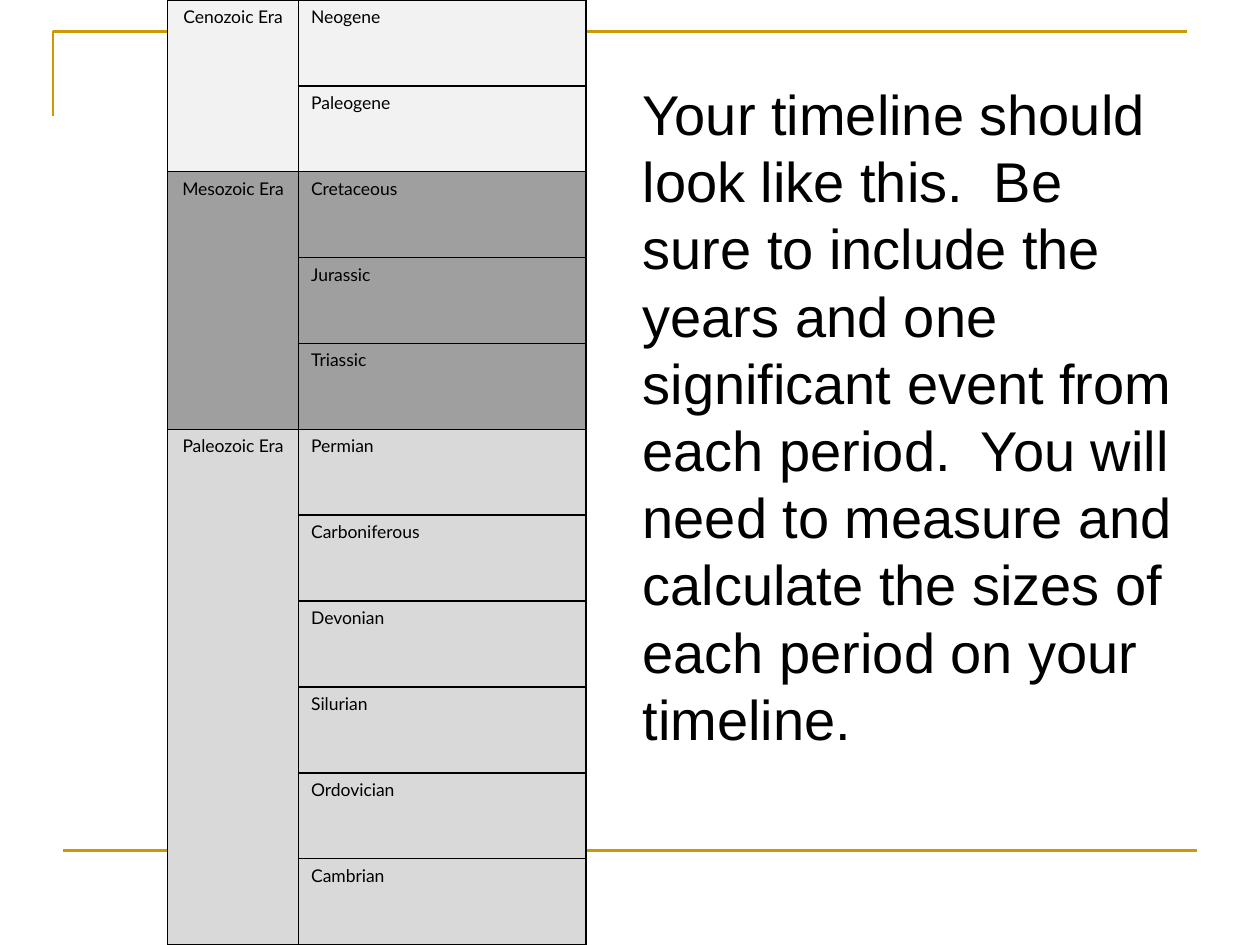
from lxml import etree
from pptx import Presentation
from pptx import util as u
from pptx.dml.color import RGBColor
from pptx.enum import shapes, text
from pptx.oxml import ns

GOLD = RGBColor(0xCC, 0x99, 0x00)
BLACK = RGBColor(0, 0, 0)
CENOZOIC = RGBColor(0xF2, 0xF2, 0xF2)
MESOZOIC = RGBColor(0x9F, 0x9F, 0x9F)
PALEOZOIC = RGBColor(0xD9, 0xD9, 0xD9)

ERAS = [
    ("Cenozoic Era", CENOZOIC, ["Neogene", "Paleogene"]),
    ("Mesozoic Era", MESOZOIC, ["Cretaceous", "Jurassic", "Triassic"]),
    ("Paleozoic Era", PALEOZOIC,
     ["Permian", "Carboniferous", "Devonian", "Silurian", "Ordovician", "Cambrian"]),
]
INSTRUCTIONS = (
    "Your timeline should look like this.  Be sure to include the years and one "
    "significant event from each period.  You will need to measure and calculate "
    "the sizes of each period on your timeline."
)


class TimelinePage:
    title_font = "Arial"
    table_font = "Lato"
    rule_width = u.Pt(1.5)
    border_width = u.Pt(1)

    def __init__(self, deck):
        self.page = deck.slides.add_slide(deck.slide_layouts[5])

    def add_span(self, para, words, font, size):
        span = para.add_run()
        span.text = words
        span.font.name = font
        span.font.size = u.Pt(size)
        span.font.color.rgb = BLACK

    def title(self, words, left, top, width, height):
        box = self.page.shapes.title
        box.left, box.top = u.Inches(left), u.Inches(top)
        box.width, box.height = u.Inches(width), u.Inches(height)
        frame = box.text_frame
        frame.word_wrap = True
        frame.auto_size = text.MSO_AUTO_SIZE.NONE
        frame.vertical_anchor = text.MSO_ANCHOR.TOP
        para = frame.paragraphs[0]
        para.alignment = text.PP_ALIGN.LEFT
        para.line_spacing = u.Pt(38.4)
        self.add_span(para, words, self.title_font, 32)

    def corner(self, points):
        start, *rest = [(u.Inches(x), u.Inches(y)) for x, y in points]
        builder = self.page.shapes.build_freeform(*start)
        builder.add_line_segments(rest, close=False)
        outline = builder.convert_to_shape()
        outline.shadow.inherit = False
        outline.fill.background()
        self.rule_style(outline)

    def rule(self, x1, y1, x2, y2):
        line = self.page.shapes.add_connector(
            shapes.MSO_CONNECTOR.STRAIGHT, *map(u.Inches, (x1, y1, x2, y2)))
        self.rule_style(line)
        etree.SubElement(line._element.spPr, ns.qn("a:effectLst"))

    def rule_style(self, shape):
        shape.line.color.rgb = GOLD
        shape.line.width = self.rule_width

    def cell(self, cell, fill, words=None, align=text.PP_ALIGN.LEFT):
        cell.fill.solid()
        cell.fill.fore_color.rgb = fill
        self.borders(cell)
        if words:
            para = cell.text_frame.paragraphs[0]
            para.alignment = align
            indent = u.Inches(0.38)
            props = para._p.get_or_add_pPr()
            props.set("marL", str(indent))
            props.set("indent", str(-indent))
            self.add_span(para, words, self.table_font, 10)

    def borders(self, cell):
        props = cell._tc.get_or_add_tcPr()
        for place, side in enumerate(("lnL", "lnR", "lnT", "lnB")):
            edge = etree.Element(ns.qn(f"a:{side}"), w=str(self.border_width))
            fill = etree.SubElement(edge, ns.qn("a:solidFill"))
            etree.SubElement(fill, ns.qn("a:srgbClr"), val=str(BLACK))
            props.insert(place, edge)

    def timeline(self, eras, left, top, widths, height):
        count = sum(len(periods) for _, _, periods in eras)
        table = self.page.shapes.add_table(
            count, len(widths), u.Inches(left), u.Inches(top),
            u.Inches(sum(widths)), u.Inches(height)).table
        table.first_row = table.horz_banding = False
        for column, width in zip(table.columns, widths):
            column.width = u.Inches(width)
        first = 0
        for era, fill, periods in eras:
            for row, period in enumerate(periods, first):
                heading = era if row == first else None
                self.cell(table.cell(row, 0), fill, heading, text.PP_ALIGN.CENTER)
                self.cell(table.cell(row, 1), fill, period)
            table.cell(first, 0).merge(table.cell(row, 0))
            first += len(periods)


def main():
    deck = Presentation()
    deck.slide_width, deck.slide_height = u.Inches(10), u.Inches(7.5)
    page = TimelinePage(deck)
    page.corner([(0.42, 0.92), (0.42, 0.25), (9.42, 0.25)])
    page.rule(0.5, 6.75, 9.5, 6.75)
    page.title(INSTRUCTIONS, 5, 0.58, 4.42, 1.25)
    page.timeline(ERAS, 1.33, 0, [1.04, 2.28], 7.5)
    deck.save("out.pptx")


if __name__ == "__main__":
    main()
